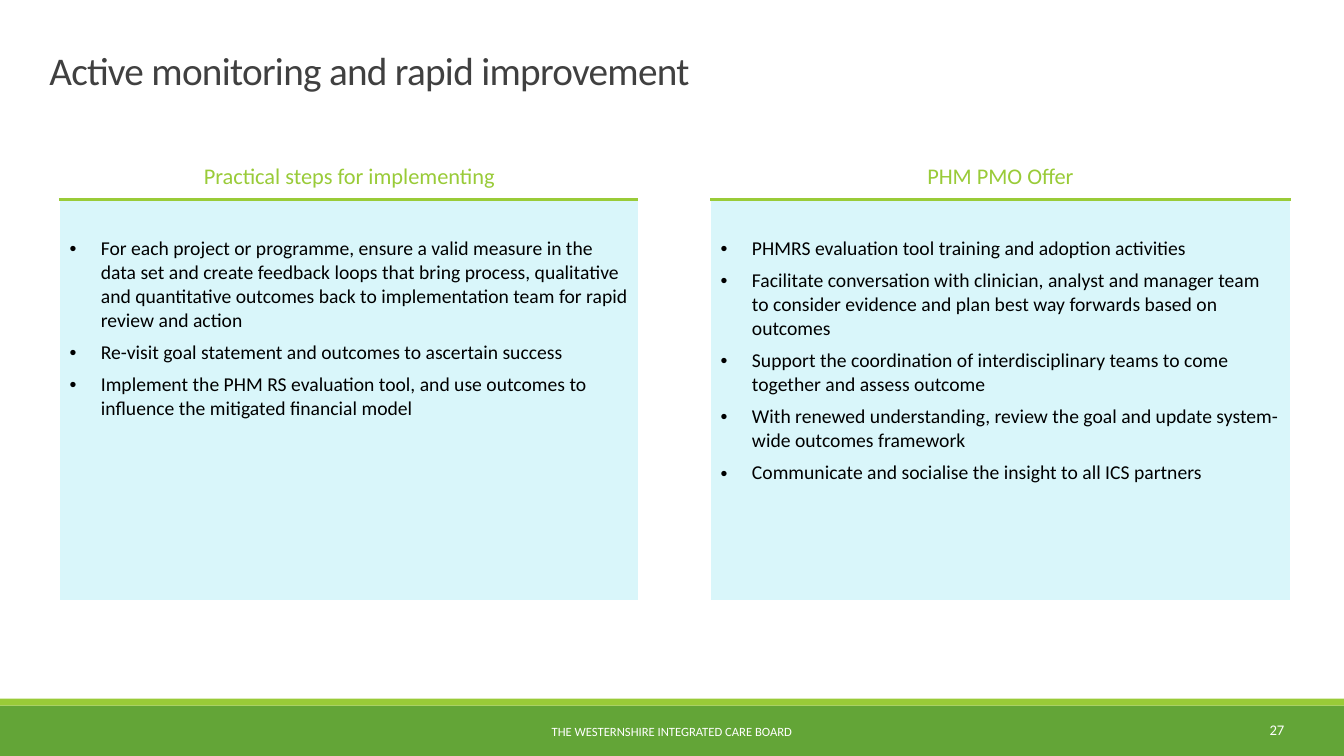
from dataclasses import dataclass

from lxml.etree import SubElement
from pptx import Presentation
from pptx.dml.color import RGBColor
from pptx.enum.shapes import MSO_SHAPE
from pptx.enum.text import MSO_ANCHOR, PP_ALIGN
from pptx.oxml.ns import qn
from pptx.util import Inches, Pt

COLOURS = {
    "band": "63A537",
    "accent": "99CB38",
    "panel": "D9F6FA",
    "title": "404040",
    "body": "000000",
    "white": "FFFFFF",
}
FONT = "Calibri"
SLIDE_WIDTH, SLIDE_HEIGHT = Inches(13.33), Inches(7.5)


@dataclass
class Area:
    """A place on a grid of 100 columns by 100 rows."""
    left: float
    top: float
    width: float
    height: float

    def box(self) -> tuple:
        return (columns(self.left), rows(self.top),
                columns(self.width), rows(self.height))


@dataclass
class Band:
    area: Area
    colour: str


@dataclass
class Label:
    text: str
    area: Area
    size: float
    colour: str
    alignment: PP_ALIGN


@dataclass
class Topic:
    column: int
    heading: str
    points: list


def columns(count: float) -> int:
    return round(SLIDE_WIDTH * count / 100)


def rows(count: float) -> int:
    return round(SLIDE_HEIGHT * count / 100)


def colour_of(name: str) -> RGBColor:
    return RGBColor.from_string(COLOURS[name])


BANDS = [
    Band(Area(0, 93.33, 100, 6.67), "band"),
    Band(Area(0, 92.4, 100, 0.93), "accent"),
]
TITLE = Label("Active monitoring and rapid improvement",
              Area(3.68, 0, 92.62, 19.33), 28, "title", PP_ALIGN.LEFT)
FOOTERS = [
    Label("27", Area(85.65, 93.87, 10.65, 5.33), 10.5, "white", PP_ALIGN.RIGHT),
    Label("THE WESTERNSHIRE INTEGRATED CARE BOARD",
          Area(30.22, 94.13, 39.52, 5.33), 9, "white", PP_ALIGN.CENTER),
]
TABLE_AREA = Area(4.43, 20.93, 91.57, 58.54)
COLUMN_WIDTHS = [43.12, 5.33, 43.12]
ROW_HEIGHTS = [5.47, 53.07]
TOPICS = [
    Topic(0, "Practical steps for implementing", [
        "For each project or programme, ensure a valid measure in the data set "
        "and create feedback loops that bring process, qualitative and "
        "quantitative outcomes back to implementation team for rapid review and action",
        "Re-visit goal statement and outcomes to ascertain success",
        "Implement the PHM RS evaluation tool, and use outcomes to influence "
        "the mitigated financial model",
    ]),
    Topic(2, "PHM PMO Offer", [
        "PHMRS evaluation tool training and adoption activities",
        "Facilitate conversation with clinician, analyst and manager team to "
        "consider evidence and plan best way forwards based on outcomes",
        "Support the coordination of interdisciplinary teams to come together "
        "and assess outcome",
        "With renewed understanding, review the goal and update system-wide "
        "outcomes framework",
        "Communicate and socialise the insight to all ICS partners",
    ]),
]


def format_runs(paragraph, size: float, colour: str) -> None:
    for run in paragraph.runs:
        run.font.name = FONT
        run.font.size = Pt(size)
        run.font.color.rgb = colour_of(colour)


def add_band(slide, band: Band) -> None:
    shape = slide.shapes.add_shape(MSO_SHAPE.RECTANGLE, *band.area.box())
    shape.shadow.inherit = False
    shape.fill.solid()
    shape.fill.fore_color.rgb = colour_of(band.colour)
    shape.line.fill.background()


def add_label(slide, label: Label):
    text_frame = slide.shapes.add_textbox(*label.area.box()).text_frame
    text_frame.word_wrap = True
    text_frame.vertical_anchor = MSO_ANCHOR.MIDDLE
    text_frame.text = label.text
    paragraph = text_frame.paragraphs[0]
    paragraph.alignment = label.alignment
    format_runs(paragraph, label.size, label.colour)
    return text_frame


def add_title(slide) -> None:
    text_frame = add_label(slide, TITLE)
    text_frame.margin_left = text_frame.margin_right = 0
    text_frame.margin_top = text_frame.margin_bottom = 0
    paragraph = text_frame.paragraphs[0]
    paragraph.line_spacing = 0.85
    paragraph.runs[0].font._element.set("spc", "-50")


def set_border(cell, side: str, colour: str, width: float) -> None:
    line = SubElement(cell._tc.get_or_add_tcPr(), qn(f"a:{side}"), w=str(Pt(width)))
    fill = SubElement(line, qn("a:solidFill"))
    SubElement(fill, qn("a:srgbClr"), val=COLOURS[colour])


def style_cell(cell, row: int, has_topic: bool) -> None:
    # Borders come before the fill in the cell properties
    rule_side = "lnB" if row == 0 else "lnT"
    for side in ("lnL", "lnR", "lnT", "lnB"):
        if side == rule_side:
            set_border(cell, side, "accent" if has_topic else "white", 3)
        else:
            set_border(cell, side, "white", 1)
    if row == 1 and has_topic:
        cell.fill.solid()
        cell.fill.fore_color.rgb = colour_of("panel")
    else:
        cell.fill.background()


def write_points(cell, points: list) -> None:
    cell.margin_top = Inches(0.37)
    cell.text_frame.text = "\n".join(points)
    for paragraph in cell.text_frame.paragraphs:
        paragraph.space_before = paragraph.space_after = Pt(3)
        format_runs(paragraph, 14, "body")
        properties = paragraph._p.get_or_add_pPr()
        properties.set("marL", str(Inches(0.31)))
        properties.set("indent", str(-Inches(0.31)))
        SubElement(properties, qn("a:buFont"), typeface="Arial")
        SubElement(properties, qn("a:buChar"), char="•")


def add_topic_table(slide) -> None:
    table = slide.shapes.add_table(
        len(ROW_HEIGHTS), len(COLUMN_WIDTHS), *TABLE_AREA.box()).table
    table.first_row = table.horz_banding = False
    for column, width in zip(table.columns, COLUMN_WIDTHS):
        column.width = columns(width)
    for row, height in zip(table.rows, ROW_HEIGHTS):
        row.height = rows(height)
    topic_columns = {topic.column for topic in TOPICS}
    for row in range(len(ROW_HEIGHTS)):
        for column in range(len(COLUMN_WIDTHS)):
            style_cell(table.cell(row, column), row, column in topic_columns)
    for topic in TOPICS:
        heading = table.cell(0, topic.column).text_frame
        heading.text = topic.heading
        heading.paragraphs[0].alignment = PP_ALIGN.CENTER
        format_runs(heading.paragraphs[0], 16, "accent")
        write_points(table.cell(1, topic.column), topic.points)


def main() -> None:
    presentation = Presentation()
    presentation.slide_width, presentation.slide_height = SLIDE_WIDTH, SLIDE_HEIGHT
    slide = presentation.slides.add_slide(presentation.slide_layouts[6])
    # Footer bands
    for band in BANDS:
        add_band(slide, band)
    # Title and table
    add_title(slide)
    add_topic_table(slide)
    # Page number and organisation
    for label in FOOTERS:
        add_label(slide, label)
    presentation.save("out.pptx")


if __name__ == "__main__":
    main()
